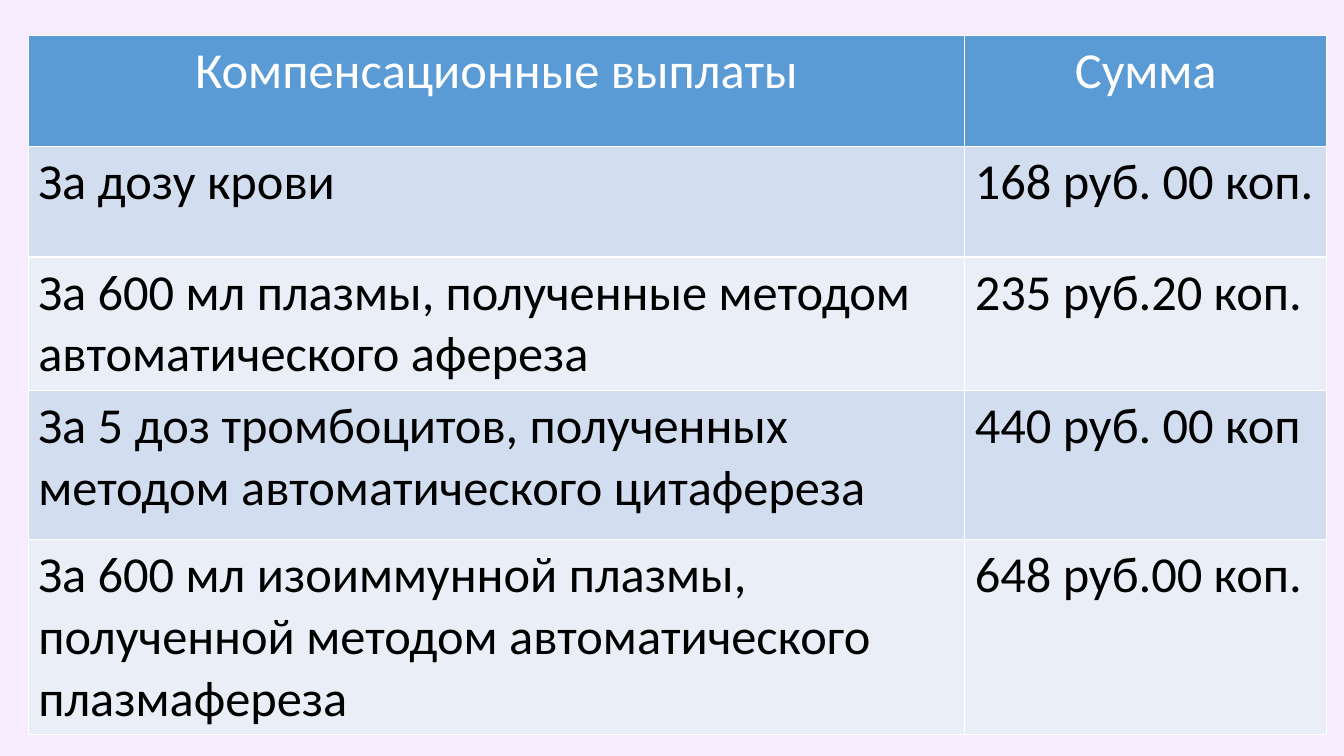
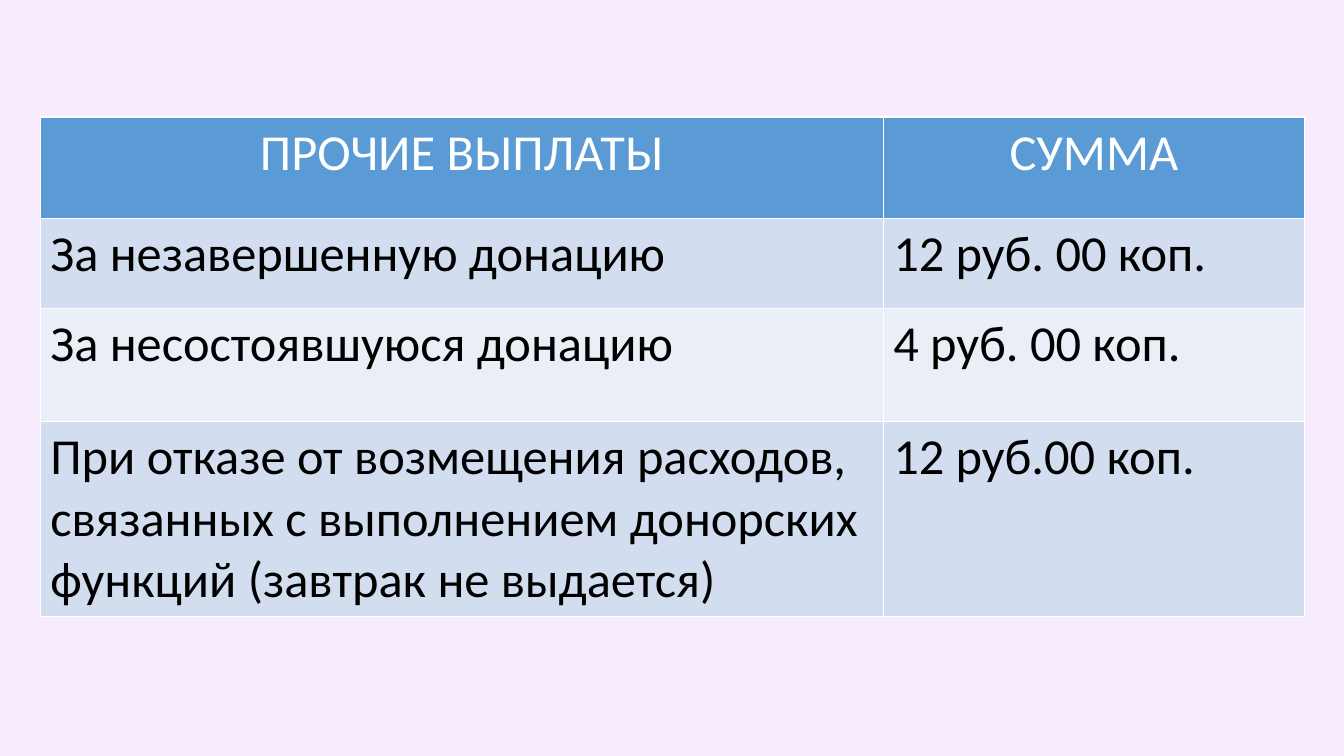
"""Build two slides with tables of payments to blood donors."""
from lxml.etree import fromstring
from pptx import Presentation
from pptx.dml.color import RGBColor
from pptx.enum.text import PP_ALIGN
from pptx.util import Inches, Pt

COLOURS = {
    "background": "F7ECFD",
    "header": "5B9BD5",
    "odd_row": "D2DEEF",
    "even_row": "EAEFF7",
    "border": "FFFFFF",
    "header_text": "FFFFFF",
    "body_text": "000000",
}
FONT_NAME = "Calibri"
FONT_SIZE = Pt(36)
DRAWING_NAMESPACE = "http://schemas.openxmlformats.org/drawingml/2006/main"

TABLES = [
    {
        "position": (0.28, 0.35),
        "columns": (9.29, 3.59),
        "row_heights": (1.1, 1.1, 1.32, 1.48, 1.93),
        "rows": [
            ("Компенсационные выплаты", "Сумма"),
            ("За дозу крови", "168 руб. 00 коп."),
            ("За 600 мл плазмы, полученные методом автоматического афереза", "235 руб.20 коп."),
            ("За 5 доз тромбоцитов, полученных методом автоматического цитафереза", "440 руб. 00 коп"),
            ("За 600 мл изоиммунной плазмы, полученной методом автоматического плазмафереза",
             "648 руб.00 коп."),
        ],
    },
    {
        "position": (0.4, 1.16),
        "columns": (8.36, 4.18),
        "row_heights": (1.01, 0.89, 1.12, 1.93),
        "rows": [
            ("ПРОЧИЕ ВЫПЛАТЫ", "СУММА"),
            ("За незавершенную донацию", "12 руб. 00 коп."),
            ("За несостоявшуюся донацию", "4 руб. 00 коп."),
            ("При отказе от возмещения расходов, связанных с выполнением донорских функций "
             "(завтрак не выдается)", "12 руб.00 коп."),
        ],
    },
]


def colour(name):
    return RGBColor.from_string(COLOURS[name])


def add_borders(cell):
    properties = cell._tc.get_or_add_tcPr()
    for index, side in enumerate(("lnL", "lnR", "lnT", "lnB")):
        properties.insert(index, fromstring(
            f'<a:{side} xmlns:a="{DRAWING_NAMESPACE}" w="{Pt(1)}"><a:solidFill>'
            f'<a:srgbClr val="{COLOURS["border"]}"/></a:solidFill></a:{side}>'))


def fill_cell(cell, text, row_index):
    is_header = row_index == 0
    band = "header" if is_header else "odd_row" if row_index % 2 else "even_row"
    cell.text = text
    cell.fill.solid()
    cell.fill.fore_color.rgb = colour(band)
    add_borders(cell)
    paragraph = cell.text_frame.paragraphs[0]
    paragraph.alignment = PP_ALIGN.CENTER if is_header else PP_ALIGN.LEFT
    font = paragraph.font
    font.name = FONT_NAME
    font.size = FONT_SIZE
    font.bold = False
    font.color.rgb = colour("header_text" if is_header else "body_text")


def add_payment_table(slide, content):
    left, top = content["position"]
    columns, heights, rows = content["columns"], content["row_heights"], content["rows"]
    table = slide.shapes.add_table(
        len(rows), len(columns), Inches(left), Inches(top),
        Inches(sum(columns)), Inches(sum(heights))).table
    for column, width in zip(table.columns, columns):
        column.width = Inches(width)
    for row_index, (row, height, texts) in enumerate(zip(table.rows, heights, rows)):
        row.height = Inches(height)
        for cell, text in zip(row.cells, texts):
            fill_cell(cell, text, row_index)


def main():
    presentation = Presentation()
    presentation.slide_width = Inches(13.33)
    presentation.slide_height = Inches(7.5)
    background = presentation.slide_master.background.fill
    background.solid()
    background.fore_color.rgb = colour("background")
    for content in TABLES:
        slide = presentation.slides.add_slide(presentation.slide_layouts[6])
        add_payment_table(slide, content)
    presentation.save("out.pptx")


if __name__ == "__main__":
    main()
